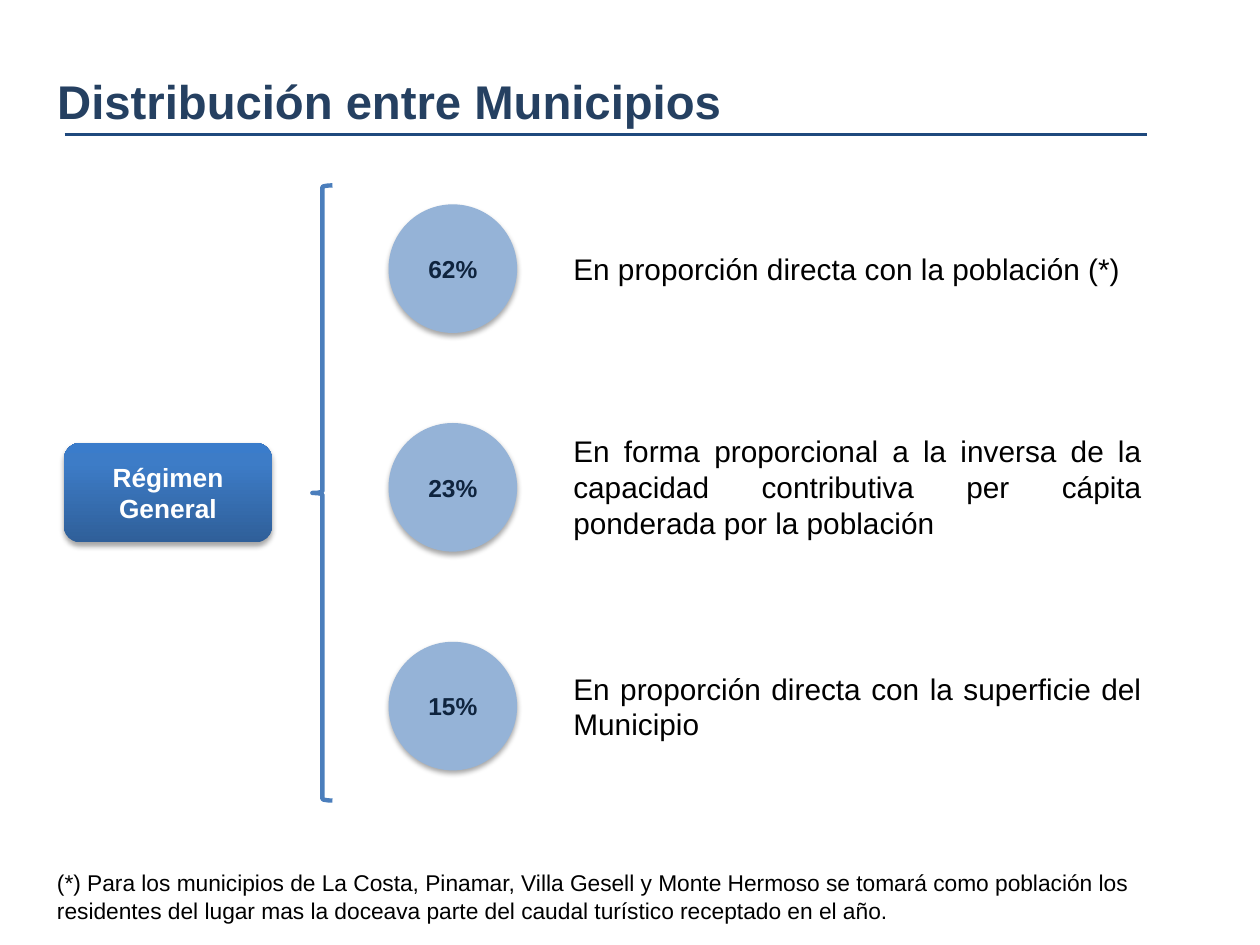
from copy import deepcopy

from lxml.etree import SubElement
from pptx import Presentation
from pptx.dml.color import RGBColor
from pptx.enum.shapes import MSO_CONNECTOR, MSO_SHAPE
from pptx.enum.text import MSO_ANCHOR, MSO_AUTO_SIZE, PP_ALIGN
from pptx.oxml import parse_xml
from pptx.oxml.ns import nsdecls, qn
from pptx.util import Pt

TITLE_BLUE = RGBColor(0x25, 0x40, 0x61)
RULE_BLUE = RGBColor(0x1F, 0x49, 0x7D)
BRACE_BLUE = RGBColor(0x4B, 0x7E, 0xBC)
CIRCLE_BLUE = RGBColor(0x95, 0xB3, 0xD7)
PERCENT_NAVY = RGBColor(0x0F, 0x24, 0x3E)
WHITE = RGBColor(0xFF, 0xFF, 0xFF)
BLACK = RGBColor(0, 0, 0)
REGIME_GRADIENT = [
    (0, RGBColor(0x2F, 0x5F, 0x99)),
    (0.8, RGBColor(0x3D, 0x7C, 0xC7)),
    (1, RGBColor(0x3A, 0x7C, 0xCB)),
]

TITLE_FORMAT = {"size": Pt(27), "bold": True}
REGIME_FORMAT = {"size": Pt(15), "bold": True}
PERCENT_FORMAT = {"size": Pt(14), "bold": True}
CRITERION_FORMAT = {"size": Pt(17)}
NOTE_FORMAT = {"size": Pt(13)}

SHARES = [
    ("62%", "En proporción directa con la población (*)", 28),
    ("23%", "En forma proporcional a la inversa de la capacidad contributiva "
            "per cápita ponderada por la población", 69),
    ("15%", "En proporción directa con la superficie del Municipio", 48),
]
NOTE = ("(*) Para los municipios de La Costa, Pinamar, Villa Gesell y Monte Hermoso "
        "se tomará como población los residentes del lugar mas la doceava parte del "
        "caudal turístico receptado en el año.")


def in_points(*lengths):
    return [Pt(length) for length in lengths]


def write(shape, wording, color, font_format, align=PP_ALIGN.LEFT, anchor=MSO_ANCHOR.TOP):
    frame = shape.text_frame
    frame.word_wrap = True
    frame.vertical_anchor = anchor
    paragraph = frame.paragraphs[0]
    paragraph.alignment = align
    run = paragraph.add_run()
    run.text = wording
    for name, value in {"name": "Arial", **font_format}.items():
        setattr(run.font, name, value)
    run.font.color.rgb = color


def add_text(slide, box, wording, font_format, align=PP_ALIGN.LEFT):
    caption = slide.shapes.add_textbox(*in_points(*box))
    write(caption, wording, BLACK, font_format, align)
    caption.text_frame.auto_size = MSO_AUTO_SIZE.SHAPE_TO_FIT_TEXT


def add_raised_shape(slide, kind, box):
    shape = slide.shapes.add_shape(kind, *in_points(*box))
    shape.line.fill.background()
    shape.element.spPr.append(parse_xml(
        f'<a:effectLst {nsdecls("a")}>'
        f'<a:outerShdw blurRad="{Pt(3.1)}" dist="{Pt(1.8)}" dir="5400000" rotWithShape="0">'
        '<a:srgbClr val="000000"><a:alpha val="35000"/></a:srgbClr>'
        '</a:outerShdw></a:effectLst>'))
    return shape


def place_heading(slide, left, top, width, height):
    title = slide.shapes.title
    title.left, title.top, title.width, title.height = in_points(left, top, width, height)
    write(title, "Distribución entre Municipios", TITLE_BLUE, TITLE_FORMAT)
    title.text_frame.auto_size = MSO_AUTO_SIZE.SHAPE_TO_FIT_TEXT
    rule_y = top + height - 0.5
    rule = slide.shapes.add_connector(
        MSO_CONNECTOR.STRAIGHT, *in_points(left + 11.5, rule_y, left + width - 5, rule_y))
    rule.line.color.rgb = RULE_BLUE
    rule.line.width = Pt(1.5)
    SubElement(rule._element.spPr, qn("a:effectLst"))


def place_regime(slide, *box):
    regime = add_raised_shape(slide, MSO_SHAPE.ROUNDED_RECTANGLE, box)
    regime.fill.gradient()
    regime.fill.gradient_angle = 90
    first_stop = regime.element.spPr.find(".//" + qn("a:gs"))
    first_stop.addnext(deepcopy(first_stop))
    for stop, (position, color) in zip(regime.fill.gradient_stops, REGIME_GRADIENT):
        stop.position = position
        stop.color.rgb = color
    write(regime, "Régimen General", WHITE, REGIME_FORMAT, PP_ALIGN.CENTER, MSO_ANCHOR.MIDDLE)


def place_brace(slide, *box):
    brace = slide.shapes.add_shape(MSO_SHAPE.LEFT_BRACE, *in_points(*box))
    brace.fill.background()
    brace.line.color.rgb = BRACE_BLUE
    brace.line.width = Pt(2.5)
    brace.shadow.inherit = False


def place_shares(slide, left, top, width, height):
    diameter = 73.5
    pitch = (height - diameter) / (len(SHARES) - 1)
    text_left = left + 98.5
    for row, (percent, criterion, text_height) in enumerate(SHARES):
        y = top + row * pitch
        circle = add_raised_shape(slide, MSO_SHAPE.OVAL, (left, y, diameter, diameter))
        circle.fill.solid()
        circle.fill.fore_color.rgb = CIRCLE_BLUE
        write(circle, percent, PERCENT_NAVY, PERCENT_FORMAT, PP_ALIGN.CENTER, MSO_ANCHOR.MIDDLE)
        text_top = y + (diameter - text_height) / 2
        add_text(slide, (text_left, text_top, left + width - text_left, text_height),
                 criterion, CRITERION_FORMAT, PP_ALIGN.JUSTIFY)


def main():
    deck = Presentation()
    deck.slide_width, deck.slide_height = in_points(720, 540)
    slide = deck.slides.add_slide(deck.slide_layouts[5])
    place_heading(slide, 25.5, 37.5, 635, 40)
    place_regime(slide, 36.5, 253, 119, 57)
    place_shares(slide, 222, 116.75, 437.5, 323.5)
    place_brace(slide, 178.5, 106, 11.5, 351.5)
    add_text(slide, (25.5, 493, 664, 39), NOTE, NOTE_FORMAT)
    deck.save("out.pptx")


if __name__ == "__main__":
    main()
